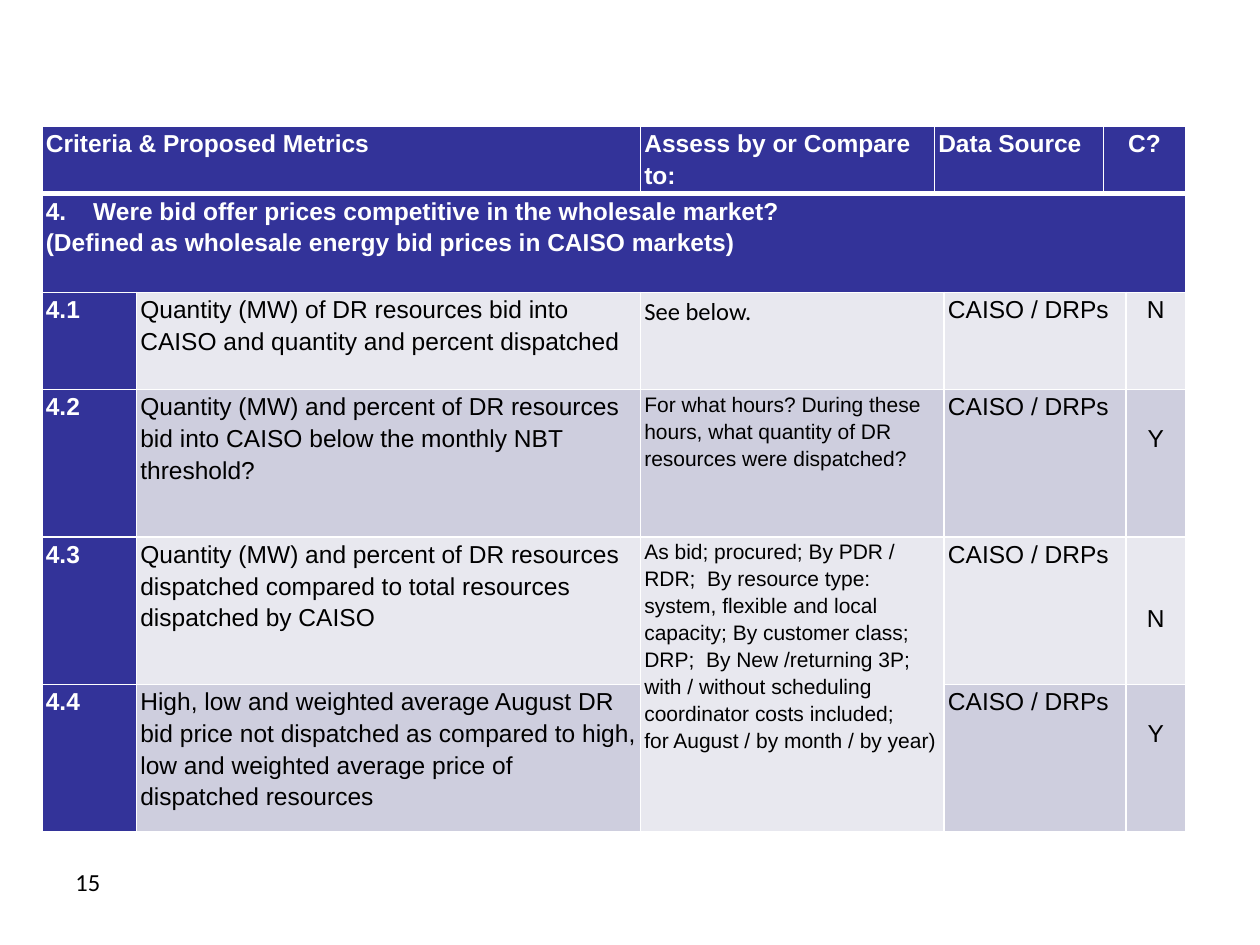
from lxml import etree
from pptx import Presentation
from pptx.dml.color import RGBColor
from pptx.enum.text import PP_ALIGN
from pptx.oxml.ns import qn
from pptx.util import Pt

LEFT, CENTER, JUSTIFY = PP_ALIGN.LEFT, PP_ALIGN.CENTER, PP_ALIGN.JUSTIFY
NAVY = RGBColor(0x33, 0x33, 0x99)
LIGHT = RGBColor(0xE8, 0xE8, 0xEF)
DARK = RGBColor(0xCE, 0xCE, 0xDE)
WHITE = RGBColor(0xFF, 0xFF, 0xFF)
BLACK = RGBColor(0, 0, 0)

COLUMN_WIDTHS = [54, 288, 168, 5.5, 91, 13, 34]
ROW_HEIGHTS = [35, 56.5, 55.5, 84.3, 84.3, 84.3]
LINE_HEIGHT = 18.2
SOURCE = "CAISO / DRPs"
HOURS = "For what hours? During these hours, what quantity of DR resources were dispatched?"
BREAKDOWN = [
    "As bid; procured; By PDR / RDR;  By resource type: system, flexible and local "
    "capacity; By customer class;",
    "DRP;  By New /returning 3P;",
    "with / without scheduling coordinator costs included;",
    "for August / by month / by year)",
]
METRICS = [
    ("4.1", "Quantity (MW) of DR resources bid into CAISO and quantity and percent dispatched",
     "N", 0, LIGHT),
    ("4.2", "Quantity (MW) and percent of DR resources bid into CAISO below the monthly "
     "NBT threshold?", "Y", 1, DARK),
    ("4.3", "Quantity (MW) and percent of DR resources dispatched compared to total "
     "resources dispatched by CAISO", "N", 2, LIGHT),
    ("4.4", "High, low and weighted average August DR bid price not dispatched as compared "
     "to high, low and weighted average price of dispatched resources", "Y", 1, DARK),
]


def add_run(paragraph, text, size=14, color=BLACK, bold=False, name="Arial"):
    run = paragraph.add_run()
    run.text = text
    font = run.font
    font.size, font.bold, font.name = Pt(size), bold, name
    font.color.rgb = color


def add_borders(cell, top, bottom):
    properties = cell._tc.get_or_add_tcPr()
    for tag, width in (("a:lnL", 1), ("a:lnR", 1), ("a:lnT", top), ("a:lnB", bottom)):
        line = etree.SubElement(properties, qn(tag), w=str(Pt(width)))
        fill = etree.SubElement(line, qn("a:solidFill"))
        etree.SubElement(fill, qn("a:srgbClr"), val=str(WHITE))


def fill_cell(cell, lines, background, align=LEFT, top=0, **font):
    cell.fill.solid()
    cell.fill.fore_color.rgb = background
    cell.margin_left = cell.margin_right = Pt(2.2)
    cell.margin_top, cell.margin_bottom = Pt(top), Pt(0)
    frame = cell.text_frame
    for index, text in enumerate(lines):
        paragraph = frame.add_paragraph() if index else frame.paragraphs[0]
        paragraph.alignment = align
        paragraph.line_spacing = 1.15
        add_run(paragraph, text, **font)


def fill_heading(cell, lines, align=LEFT):
    fill_cell(cell, lines, NAVY, align, color=WHITE, bold=True)


def number_paragraph(paragraph, start, indent):
    properties = paragraph._p.get_or_add_pPr()
    properties.set("marL", str(Pt(indent)))
    properties.set("indent", str(-Pt(indent)))
    etree.SubElement(properties, qn("a:buFont"), typeface="+mj-lt")
    etree.SubElement(properties, qn("a:buAutoNum"), type="arabicPeriod", startAt=str(start))


def add_grid(slide):
    frame = slide.shapes.add_table(len(ROW_HEIGHTS), len(COLUMN_WIDTHS), Pt(24), Pt(72),
                                   Pt(sum(COLUMN_WIDTHS)), Pt(sum(ROW_HEIGHTS)))
    table = frame.table
    table.first_row = table.horz_banding = False
    for column, width in zip(table.columns, COLUMN_WIDTHS):
        column.width = Pt(width)
    for index, (row, height) in enumerate(zip(table.rows, ROW_HEIGHTS)):
        row.height = Pt(height)
        for cell in row.cells:
            add_borders(cell, 3 if index == 1 else 1, 3 if index == 0 else 1)
    return table


def merge(table, row, first, last, row_count=1):
    cell = table.cell(row, first)
    cell.merge(table.cell(row + row_count - 1, last))
    return cell


def fill_headings(table):
    fill_heading(merge(table, 0, 0, 1), ["Criteria & Proposed Metrics"], JUSTIFY)
    fill_heading(table.cell(0, 2), ["Assess by or Compare to:"])
    fill_heading(merge(table, 0, 3, 4), ["Data Source"])
    fill_heading(merge(table, 0, 5, 6), ["C?"], CENTER)
    question = merge(table, 1, 0, 6)
    fill_heading(question, [
        "Were bid offer prices competitive in the wholesale market?",
        "(Defined as wholesale energy bid prices in CAISO markets)",
    ])
    number_paragraph(question.text_frame.paragraphs[0], 4, 27)


def fill_metrics(table):
    for row, (number, metric, answer, lines_above, color) in enumerate(METRICS, start=2):
        fill_heading(table.cell(row, 0), [number])
        fill_cell(table.cell(row, 1), [metric], color)
        fill_cell(merge(table, row, 4, 5), [SOURCE], color)
        fill_cell(table.cell(row, 6), [answer], color, CENTER, lines_above * LINE_HEIGHT)


def fill_comparisons(table):
    fill_cell(merge(table, 2, 2, 3), ["See below."], LIGHT, name="Calibri")
    fill_cell(merge(table, 3, 2, 3), [HOURS], DARK, size=12)
    fill_cell(merge(table, 4, 2, 3, row_count=2), BREAKDOWN, LIGHT, size=12)


def add_page_number(slide, number):
    box = slide.shapes.add_textbox(Pt(36), Pt(492), Pt(132), Pt(37.5))
    box.text_frame.word_wrap = True
    add_run(box.text_frame.paragraphs[0], number, name="Calibri")


def main():
    presentation = Presentation()
    presentation.slide_width, presentation.slide_height = Pt(720), Pt(540)
    slide = presentation.slides.add_slide(presentation.slide_layouts[6])
    add_page_number(slide, "15")
    table = add_grid(slide)
    fill_headings(table)
    fill_metrics(table)
    fill_comparisons(table)
    presentation.save("out.pptx")


if __name__ == "__main__":
    main()
